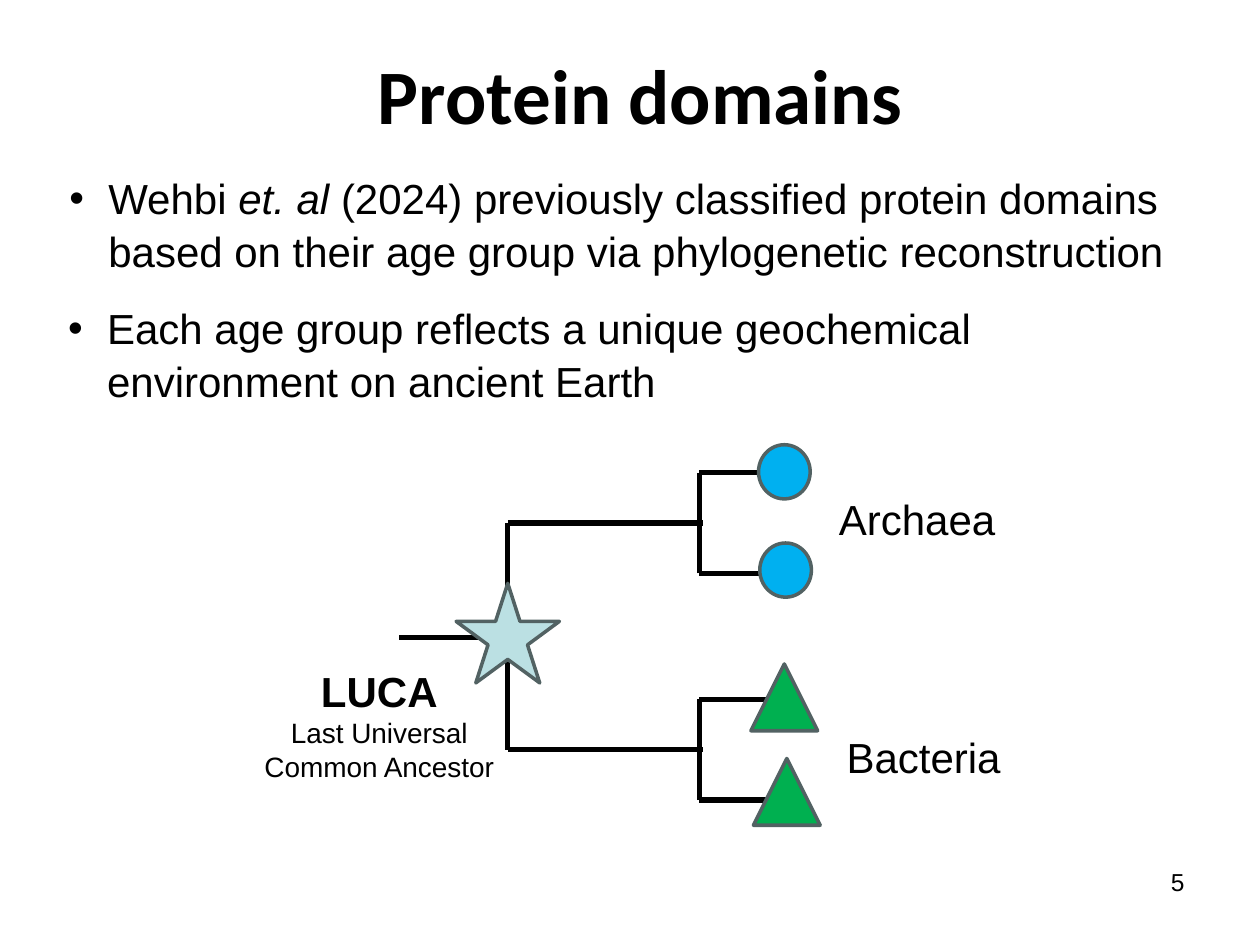
from pptx import Presentation, util as u
from pptx.dml.color import RGBColor
from pptx.enum import shapes, text
from lxml import etree

HUE = {"ink": "000000", "edge": "526263", "star": "BBE0E3",
       "blue": "00B0F0", "green": "00B050"}
KIND = shapes.MSO_SHAPE
LEFT, MID, RIGHT = text.PP_ALIGN.LEFT, text.PP_ALIGN.CENTER, text.PP_ALIGN.RIGHT

# Runs are (words, size, style); style holds b for bold, i for italic
TITLE = [("Protein domains", 44, "b")]
BULLETS = [
    ((0.45, 1.3, 9.05, 0.91),
     [("Wehbi ", 24, ""), ("et. al ", 24, "i"),
      ("(2024) previously classified protein domains based on their "
       "age group via phylogenetic reconstruction", 24, "")]),
    ((0.44, 2.33, 9.05, 0.91),
     [("Each age group reflects a unique geochemical environment "
       "on ancient Earth", 24, "")]),
]
LUCA = [[("LUCA", 24, "b")], [("Last Universal Common Ancestor", 16, "")]]

# Tree grid: columns for stem, root, fork and tips; rows around the root
STEM, ROOT, FORK, TIP = 3.17, 4.03, 5.55, 6.22
ROW, GAP = 5.06, 0.4
CLADES = [
    {"name": "Archaea", "row": 4.15, "kind": KIND.OVAL, "hue": "blue",
     "size": (0.41, 0.43), "tips": [(6.02, 3.53), (6.03, 4.31)],
     "label": (6.56, 3.87, 1.55, 0.5)},
    {"name": "Bacteria", "row": 5.95, "kind": KIND.ISOSCELES_TRIANGLE,
     "hue": "green", "size": (0.53, 0.53),
     "tips": [(5.96, 5.27), (5.98, 6.02)],
     "label": (6.62, 5.76, 1.55, 0.5)},
]


def tone(name):
    return RGBColor.from_string(HUE[name])


def place(box, at):
    box.left, box.top, box.width, box.height = map(u.Inches, at)


def write(para, runs, face="Arial", align=LEFT):
    para.alignment = align
    for words, size, style in runs:
        run = para.add_run()
        run.text = words
        font = run.font
        font.name, font.size = face, u.Pt(size)
        font.bold, font.italic = "b" in style, "i" in style
        font.color.rgb = tone("ink")


def label(host, at, paras, align=LEFT, inset=0.1):
    frame = host.add_textbox(*map(u.Inches, at)).text_frame
    frame.word_wrap = True
    frame.margin_left = frame.margin_right = u.Inches(inset)
    for n, runs in enumerate(paras):
        para = frame.add_paragraph() if n else frame.paragraphs[0]
        write(para, runs, align=align)


def branch(host, *ends):
    line = host.add_connector(shapes.MSO_CONNECTOR.STRAIGHT,
                              *map(u.Inches, ends))
    line.line.width = u.Pt(3)
    line.line.color.rgb = tone("ink")
    props = line._element.spPr
    etree.SubElement(props, props.tag.replace("}spPr", "}effectLst").replace(
        "presentationml", "drawingml"))


def mark(host, kind, at, hue):
    shape = host.add_shape(kind, *map(u.Inches, at))
    shape.shadow.inherit = False
    shape.fill.solid()
    shape.fill.fore_color.rgb = tone(hue)
    shape.line.color.rgb = tone("edge")
    shape.line.width = u.Pt(2)


def head(slide):
    """Fill the title and the two bullet placeholders."""
    title, *bodies = slide.placeholders
    place(title, (2.84, 0.2, 4.49, 1.08))
    title.text_frame.auto_size = text.MSO_AUTO_SIZE.NONE
    title.text_frame.vertical_anchor = text.MSO_ANCHOR.MIDDLE
    write(title.text_frame.paragraphs[0], TITLE, "Calibri", MID)
    for body, (at, runs) in zip(bodies, BULLETS):
        place(body, at)
        body.text_frame.auto_size = text.MSO_AUTO_SIZE.NONE
        para = body.text_frame.paragraphs[0]
        write(para, runs)
        para.space_before, para.line_spacing = u.Pt(0), 1.05
        props = para._p.get_or_add_pPr()
        props.set("marL", str(u.Inches(0.31)))
        props.set("indent", str(-u.Inches(0.31)))


def tree(host):
    branch(host, STEM, ROW, ROOT, ROW)
    for clade in CLADES:
        row = clade["row"]
        branch(host, ROOT, row, ROOT, ROW)
        branch(host, ROOT, row, FORK + 0.03, row)
    mark(host, KIND.STAR_5_POINT, (3.62, 4.63, 0.82, 0.79), "star")
    label(host, (1.75, 5.23, 2.52, 1.04), LUCA, MID, 0.2)
    for clade in CLADES:
        for side in (-GAP, GAP):
            row = clade["row"] + side
            branch(host, FORK, row, FORK, clade["row"])
            branch(host, FORK, row, TIP, row)
        for tip in clade["tips"]:
            mark(host, clade["kind"], tip + clade["size"], clade["hue"])
        label(host, clade["label"], [[(clade["name"], 24, "")]])


def main():
    deck = Presentation()
    deck.slide_width, deck.slide_height = u.Inches(10), u.Inches(7.5)
    slide = deck.slides.add_slide(deck.slide_layouts[3])
    head(slide)
    label(slide.shapes, (7.17, 6.83, 2.33, 0.52), [[("5", 14, "")]], RIGHT)
    tree(slide.shapes.add_group_shape().shapes)
    deck.save("out.pptx")


if __name__ == "__main__":
    main()
